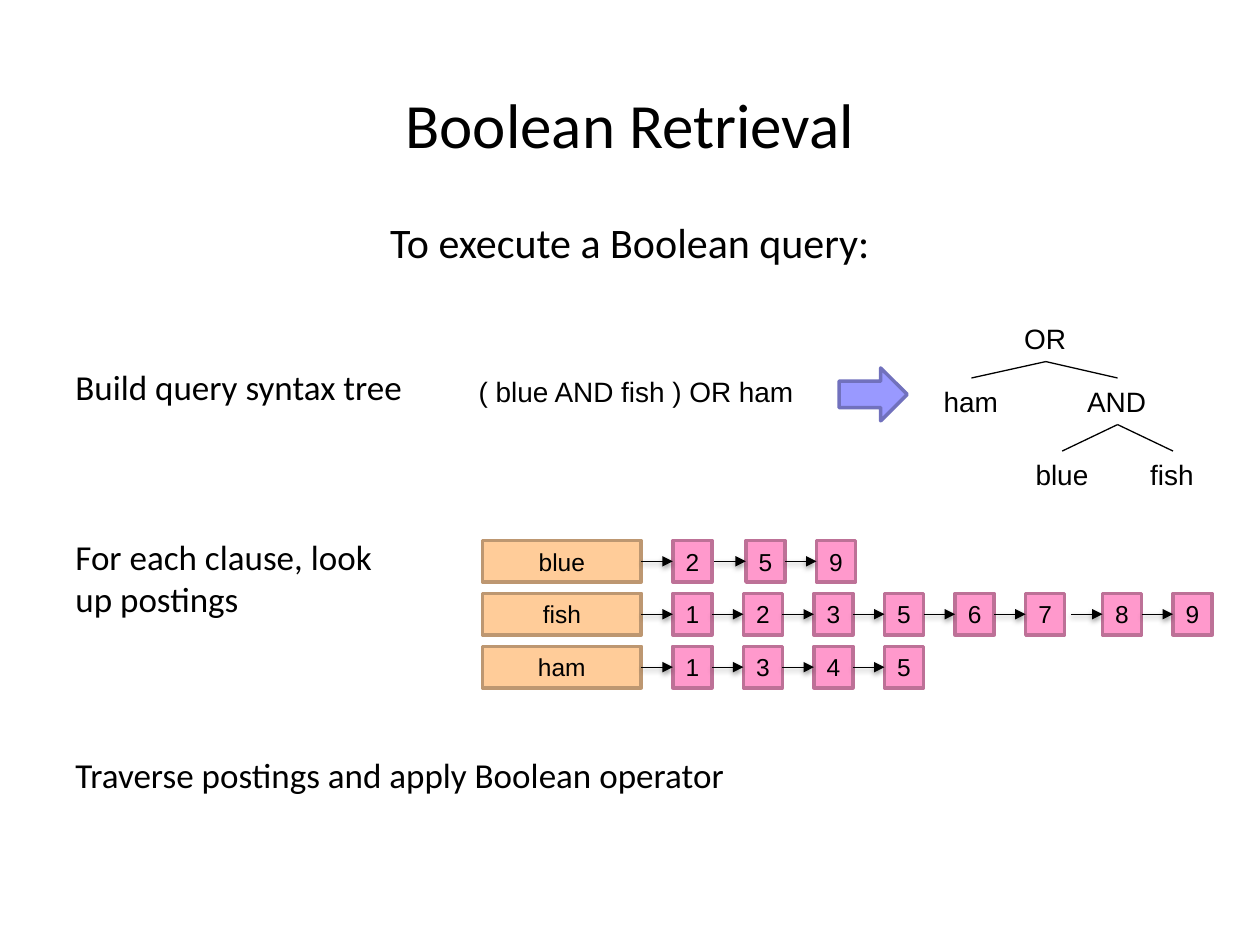
from dataclasses import dataclass
from typing import Optional

from lxml.etree import SubElement
from pptx import Presentation
from pptx.dml.color import RGBColor
from pptx.enum.shapes import MSO_CONNECTOR, MSO_SHAPE
from pptx.enum.text import MSO_ANCHOR, MSO_AUTO_SIZE, PP_ALIGN
from pptx.oxml.ns import qn
from pptx.util import Inches, Pt


@dataclass(frozen=True)
class Theme:
    text: str = "000000"
    term_fill: str = "FFCC99"
    term_line: str = "BD9771"
    doc_fill: str = "FF99CC"
    doc_line: str = "BD7197"
    arrow_fill: str = "9999FF"
    arrow_line: str = "7171BD"
    head_font: str = "Calibri"
    diagram_font: str = "Arial"
    title_size: int = 36
    lead_size: int = 24
    step_size: int = 20
    tree_size: int = 16
    box_size: int = 14
    border: float = 2
    thin: float = 0.75


@dataclass(frozen=True)
class Label:
    text: str
    x: float
    y: float
    w: float
    h: float = 0.37


@dataclass(frozen=True)
class Branch:
    x1: float
    y1: float
    x2: float
    y2: float


@dataclass(frozen=True)
class Postings:
    term: str
    docs: tuple[int, ...]
    shift_from: int = 0
    shift: float = 0


THEME = Theme()

STEPS = (
    Label("Build query syntax tree", 0.5, 2.85, 3, 0.44),
    Label("For each clause, look up postings", 0.5, 4.2, 2.75, 0.77),
    Label("Traverse postings and apply Boolean operator", 0.5, 5.93, 5.75, 0.44),
)
QUERY_AND_TREE = (
    Label("( blue AND fish ) OR ham", 3.7, 2.92, 2.73),
    Label("OR", 8.03, 2.5, 0.54),
    Label("ham", 7.39, 3, 0.64),
    Label("AND", 8.53, 3, 0.67),
    Label("blue", 8.12, 3.58, 0.62),
    Label("fish", 9.03, 3.58, 0.55),
)
BRANCHES = (
    Branch(8.3, 2.87, 7.71, 3),
    Branch(8.3, 2.87, 8.87, 3),
    Branch(8.87, 3.37, 8.43, 3.58),
    Branch(8.87, 3.37, 9.31, 3.58),
)
INDEX = (
    Postings("blue", (2, 5, 9), 1, 0.02),
    Postings("fish", (1, 2, 3, 5, 6, 7, 8, 9), 6, 0.05),
    Postings("ham", (1, 3, 4, 5)),
)
INDEX_TOP, ROW_PITCH, BOX_H = 4.29, 0.42, 0.33
TERM_X, TERM_W = 3.83, 1.26
DOC_X, DOC_W, DOC_PITCH = 5.34, 0.31, 0.56
LINK_W = 0.25


def rgb(value: str) -> RGBColor:
    return RGBColor.from_string(value)


def write(tf, text: str, font: str, size: int, align: Optional[PP_ALIGN] = None) -> None:
    p = tf.paragraphs[0]
    if align is not None:
        p.alignment = align
    r = p.add_run()
    r.text = text
    r.font.name = font
    r.font.size = Pt(size)
    r.font.color.rgb = rgb(THEME.text)


def fill_placeholder(sp, label: Label, size: int, anchor: MSO_ANCHOR) -> None:
    sp.left, sp.top = Inches(label.x), Inches(label.y)
    sp.width, sp.height = Inches(label.w), Inches(label.h)
    tf = sp.text_frame
    tf.auto_size = MSO_AUTO_SIZE.NONE
    tf.vertical_anchor = anchor
    write(tf, label.text, THEME.head_font, size, PP_ALIGN.CENTER)


def add_label(s, label: Label, font: str, size: int, wrap: bool) -> None:
    sp = s.shapes.add_textbox(
        Inches(label.x), Inches(label.y), Inches(label.w), Inches(label.h))
    sp.text_frame.word_wrap = wrap
    write(sp.text_frame, label.text, font, size)


def add_block(s, kind: MSO_SHAPE, area: Label, fill: str, line: str) -> None:
    sp = s.shapes.add_shape(
        kind, Inches(area.x), Inches(area.y), Inches(area.w), Inches(area.h))
    sp.shadow.inherit = False
    sp.fill.solid()
    sp.fill.fore_color.rgb = rgb(fill)
    sp.line.color.rgb = rgb(line)
    sp.line.width = Pt(THEME.border)
    if area.text:
        tf = sp.text_frame
        tf.word_wrap = False
        tf.vertical_anchor = MSO_ANCHOR.MIDDLE
        write(tf, area.text, THEME.diagram_font, THEME.box_size, PP_ALIGN.CENTER)


def add_line(s, line: Branch, pointer: bool = False) -> None:
    cx = s.shapes.add_connector(
        MSO_CONNECTOR.STRAIGHT, Inches(line.x1), Inches(line.y1),
        Inches(line.x2), Inches(line.y2))
    cx.line.color.rgb = rgb(THEME.text)
    cx.line.width = Pt(THEME.thin)
    effects = SubElement(cx._element.spPr, qn("a:effectLst"))
    if pointer:
        SubElement(cx.line._get_or_add_ln(), qn("a:tailEnd"), type="triangle")
        shadow = SubElement(
            effects, qn("a:outerShdw"), blurRad=str(Pt(3.1)), dist=str(Pt(1.6)),
            dir="5400000", rotWithShape="0")
        color = SubElement(shadow, qn("a:srgbClr"), val=THEME.text)
        SubElement(color, qn("a:alpha"), val="38000")


def add_postings(s, row: Postings, y: float) -> None:
    add_block(s, MSO_SHAPE.RECTANGLE, Label(row.term, TERM_X, y, TERM_W, BOX_H),
              THEME.term_fill, THEME.term_line)
    mid = y + BOX_H / 2
    for i, doc in enumerate(row.docs):
        x = DOC_X + i * DOC_PITCH + (row.shift if i >= row.shift_from else 0)
        add_block(s, MSO_SHAPE.RECTANGLE, Label(str(doc), x, y, DOC_W, BOX_H),
                  THEME.doc_fill, THEME.doc_line)
        add_line(s, Branch(x - LINK_W, mid, x, mid), pointer=True)


def main() -> None:
    prs = Presentation()
    prs.slide_width, prs.slide_height = Inches(10), Inches(7.5)
    s = prs.slides.add_slide(prs.slide_layouts[0])
    fill_placeholder(s.shapes.title, Label("Boolean Retrieval", 0, 0.6, 10, 0.75),
                     THEME.title_size, MSO_ANCHOR.MIDDLE)
    fill_placeholder(s.placeholders[1],
                     Label("To execute a Boolean query:", 0, 1.67, 10, 0.5),
                     THEME.lead_size, MSO_ANCHOR.TOP)
    for step in STEPS:
        add_label(s, step, THEME.head_font, THEME.step_size, True)
    for label in QUERY_AND_TREE:
        add_label(s, label, THEME.diagram_font, THEME.tree_size, False)
    for branch in BRANCHES:
        add_line(s, branch)
    add_block(s, MSO_SHAPE.RIGHT_ARROW, Label("", 6.66, 2.92, 0.54, 0.42),
              THEME.arrow_fill, THEME.arrow_line)
    for i, row in enumerate(INDEX):
        add_postings(s, row, INDEX_TOP + i * ROW_PITCH)
    prs.save("out.pptx")


if __name__ == "__main__":
    main()
